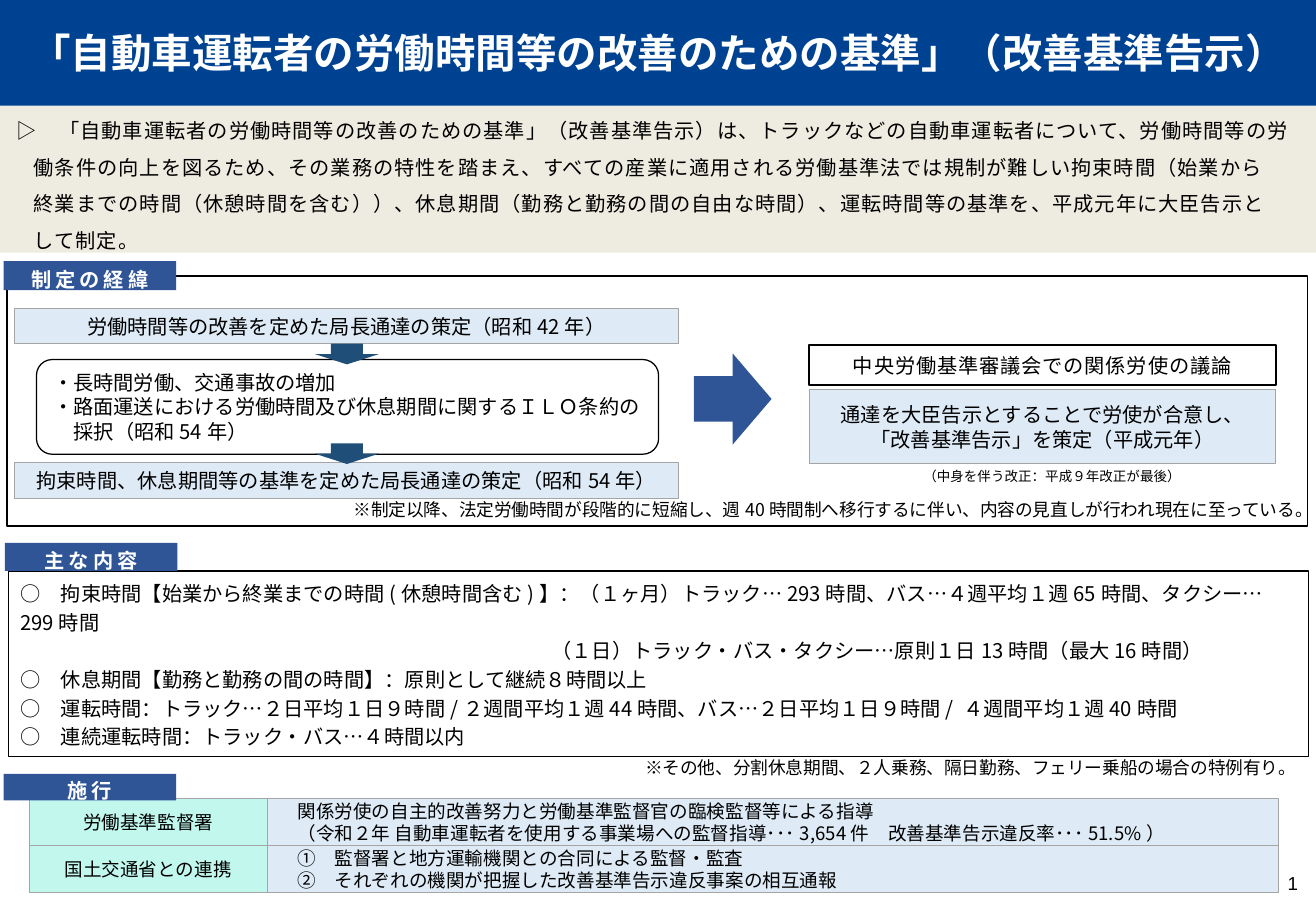
from pptx import Presentation, util as u
from pptx.dml.color import RGBColor
from pptx.enum import shapes, text
from pptx.oxml.ns import qn
from lxml import etree

PX = 9144  # 100 px to the inch
FONT = "Noto Sans CJK JP"
BLACK = RGBColor(0x00, 0x00, 0x00)
WHITE = RGBColor(0xFF, 0xFF, 0xFF)
GREY = RGBColor(0xA5, 0xA5, 0xA5)
PALE = RGBColor(0xDE, 0xEB, 0xF7)
MINT = RGBColor(0xC1, 0xF7, 0xED)
CREAM = RGBColor(0xEE, 0xEC, 0xE1)
BLUE = RGBColor(0x2F, 0x55, 0x97)
STEEL = RGBColor(0x1F, 0x4E, 0x79)
NAVY = RGBColor(0x00, 0x42, 0x92)
KIND = shapes.MSO_SHAPE
ALIGN = text.PP_ALIGN
LEFT, MID, RIGHT = ALIGN.LEFT, ALIGN.CENTER, ALIGN.RIGHT
TOP, CENTER = text.MSO_ANCHOR.TOP, text.MSO_ANCHOR.MIDDLE

prs = Presentation()
prs.slide_width, prs.slide_height = 1083 * PX, 750 * PX
slide = prs.slides.add_slide(prs.slide_layouts[6])


def write(shape, lines, size=12, color=BLACK, bold=False, align=MID, anchor=CENTER,
          font=FONT, track=0, space=None, after=0, pad=5):
    """Each line is a string, or a tuple of string and left indent in px."""
    frame = shape.text_frame
    frame.word_wrap = True
    frame.vertical_anchor = anchor
    frame.margin_top = frame.margin_bottom = pad * PX
    for i, line in enumerate(lines):
        words, indent = line if isinstance(line, tuple) else (line, 0)
        para = frame.add_paragraph() if i else frame.paragraphs[0]
        para.alignment = align
        para.space_after = u.Pt(after)
        if space:
            para.line_spacing = space
        if indent:
            para._p.get_or_add_pPr().set("marL", str(indent * PX))
        run = para.add_run()
        run.text = words
        run.font.size = u.Pt(size)
        run.font.bold = bold
        run.font.color.rgb = color
        run.font.name = font
        props = run._r.get_or_add_rPr()
        etree.SubElement(props, qn("a:ea")).set("typeface", font)
        if track:
            props.set("spc", str(track))
    return frame


def draw(at, fill=None, line=None, width=0.5, kind=KIND.RECTANGLE):
    shape = slide.shapes.add_shape(kind, *[n * PX for n in at])
    shape.shadow.inherit = False
    if fill is None:
        shape.fill.background()
    else:
        shape.fill.solid()
        shape.fill.fore_color.rgb = fill
    if line is None:
        shape.line.fill.background()
    else:
        shape.line.color.rgb = line
        shape.line.width = u.Pt(width)
    return shape


# Background: causes, two notices, arrows
causes = draw((30, 296, 512, 78), WHITE, BLACK, 0.75, KIND.ROUNDED_RECTANGLE)
write(causes, ["・長時間労働、交通事故の増加",
               "・路面運送における労働時間及び休息期間に関するＩＬＯ条約の",
               ("採択（昭和54年）", 17)], align=LEFT)
for top, words in ((254, "労働時間等の改善を定めた局長通達の策定（昭和42年）"),
                   (381, "拘束時間、休息期間等の基準を定めた局長通達の策定（昭和54年）")):
    write(draw((12, top, 546, 29), PALE, GREY), [words])
for top in (283, 365):
    draw((259, top, 53, 17), STEEL, kind=KIND.DOWN_ARROW)
draw((571, 291, 64, 75), BLUE, kind=KIND.RIGHT_ARROW)

# Outcome
write(draw((666, 284, 384, 33), WHITE, BLACK, 1.5),
      ["中央労働基準審議会での関係労使の議論"], track=50)
write(draw((666, 321, 384, 61), PALE, GREY),
      ["通達を大臣告示とすることで労使が合意し、", "「改善基準告示」を策定（平成元年）"])

# Main contents
rules = write(draw((7, 470, 1070, 153), WHITE, BLACK, 1), [
    "○　拘束時間【始業から終業までの時間(休憩時間含む)】：（１ヶ月）トラック…293時間、バス…４週平均１週65時間、タクシー…299時間",
    ("（１日）トラック・バス・タクシー…原則１日13時間（最大16時間）", 437),
    "○　休息期間【勤務と勤務の間の時間】：原則として継続８時間以上",
    "○　運転時間：トラック…２日平均１日９時間/２週間平均１週44時間、バス…２日平均１日９時間/ ４週間平均１週40時間",
    "○　連続運転時間：トラック・バス…４時間以内",
    "※その他、分割休息期間、２人乗務、隔日勤務、フェリー乗船の場合の特例有り。",
], align=LEFT, anchor=TOP, space=u.Pt(17))
rules.paragraphs[-1].alignment = RIGHT
rules.paragraphs[-1].runs[0].font.size = u.Pt(10.5)

# Frame of the background section
draw((6, 227, 1070, 206), line=BLACK, width=1)

# Enforcement rows
ROWS = (
    ("労働基準監督署",
     "関係労使の自主的改善努力と労働基準監督官の臨検監督等による指導",
     "（令和２年 自動車運転者を使用する事業場への監督指導･･･3,654件　改善基準告示違反率･･･51.5%）"),
    ("国土交通省との連携",
     "①　監督署と地方運輸機関との合同による監督・監査",
     "②　それぞれの機関が把握した改善基準告示違反事案の相互通報"),
)
for i, (name, *facts) in enumerate(ROWS):
    top = 657 + 39 * i
    write(draw((24, top, 196, 39), MINT, GREY), [name], size=11)
    write(draw((220, top, 832, 39), PALE, GREY),
          [(fact, 15) for fact in facts], size=11, align=LEFT)

# Title band and introduction
draw((0, -1, 1083, 91), NAVY)
write(draw((0, 87, 1083, 121), CREAM), [
    ("▷　「自動車運転者の労働時間等の改善のための基準」（改善基準告示）は、トラックなどの自動車運転者について、労働時間等の労", 4),
    ("働条件の向上を図るため、その業務の特性を踏まえ、すべての産業に適用される労働基準法では規制が難しい拘束時間（始業から", 18),
    ("終業までの時間（休憩時間を含む））、休息期間（勤務と勤務の間の自由な時間）、運転時間等の基準を、平成元年に大臣告示と", 18),
    ("して制定。", 18),
], align=LEFT, track=60, space=1.5, pad=0)

# Section tags
for left, top, high, name in ((3, 215, 24, "制定の経緯"), (4, 447, 23, "主な内容"),
                              (3, 637, 22, "施行")):
    write(draw((left, top, 142, high), BLUE), [name], color=WHITE, bold=True,
          track=240, space=1.3, after=8)

# Plain text: title, notes, page number
LABELS = (
    ((0, 18, 1083, 50), "「自動車運転者の労働時間等の改善のための基準」（改善基準告示）",
     dict(size=24, color=WHITE, bold=True)),
    ((281, 406, 810, 28),
     "※制定以降、法定労働時間が段階的に短縮し、週40時間制へ移行するに伴い、内容の見直しが行われ現在に至っている。",
     dict(size=10.5, anchor=TOP)),
    ((750, 378, 235, 26), "（中身を伴う改正：平成９年改正が最後）",
     dict(size=8, align=LEFT, anchor=TOP, space=1.2, after=6)),
    ((1009, 712, 69, 30), "1", dict(size=11.1, align=RIGHT, font="Arial")),
)
for at, words, style in LABELS:
    write(slide.shapes.add_textbox(*[n * PX for n in at]), [words], **style)

prs.save("out.pptx")
